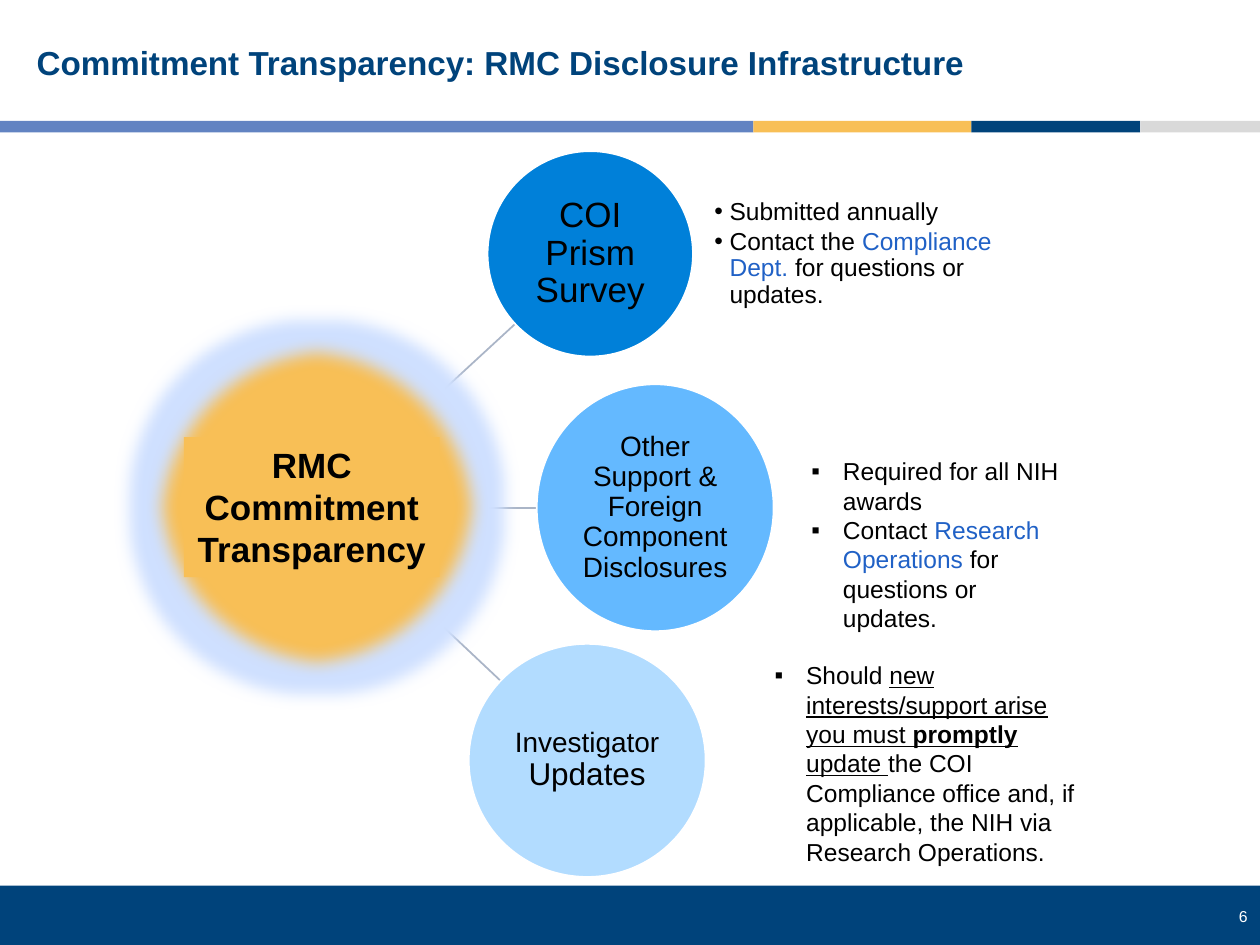
from dataclasses import dataclass

from lxml.etree import SubElement
from pptx import Presentation
from pptx.dml.color import RGBColor
from pptx.enum.shapes import MSO_CONNECTOR, MSO_SHAPE
from pptx.enum.text import MSO_ANCHOR, MSO_AUTO_SIZE, PP_ALIGN
from pptx.oxml.ns import qn
from pptx.util import Inches, Pt

NAVY = RGBColor(0x00, 0x43, 0x7B)
PERIWINKLE = RGBColor(0x62, 0x83, 0xC2)
GOLD = RGBColor(0xF8, 0xBF, 0x56)
GRAY = RGBColor(0xD9, 0xD9, 0xD9)
SPOKE = RGBColor(0xAA, 0xB5, 0xC7)
LINK = RGBColor(0x20, 0x61, 0xC6)
BLACK = RGBColor(0, 0, 0)
WHITE = RGBColor(0xFF, 0xFF, 0xFF)
BLUES = [RGBColor(0x00, 0x80, 0xD9), RGBColor(0x64, 0xB9, 0xFF), RGBColor(0xB2, 0xDC, 0xFF)]
GLOW = "CFE0FF"


@dataclass
class Run:
    text: str
    size: float = 14
    color: RGBColor = BLACK
    bold: bool = False
    underline: bool = False


@dataclass
class Topic:
    box: tuple
    fill: RGBColor
    label: list
    spoke: tuple


@dataclass
class BulletList:
    box: tuple
    items: list
    char: str = "▪"
    indent: float = 0.25
    spacing: float = 1.0
    after: float = 0
    margins: tuple = (0.1, 0.05)
    anchor: MSO_ANCHOR = MSO_ANCHOR.TOP


TOPICS = [
    Topic((3.87, 1.2, 1.63, 1.63), BLUES[0], [Run("COI Prism Survey", 20)],
          (3.46, 3.15, 4.09, 2.57)),
    Topic((4.26, 3.05, 1.88, 1.96), BLUES[1],
          [Run("Other Support & Foreign Component Disclosures", 16)], (3.46, 4.03, 4.26, 4.03)),
    Topic((3.72, 5.11, 1.88, 1.85), BLUES[2], [Run("Investigator ", 16), Run("Updates", 18)],
          (3.46, 4.92, 3.97, 5.4)),
]
LISTS = [
    BulletList((5.67, 1.2, 2.45, 1.63), [
        [Run("Submitted annually")],
        [Run("Contact the "), Run("Compliance Dept.", color=LINK),
         Run(" for questions or updates.")],
    ], "•", 0.12, 0.9, 2, (0, 0), MSO_ANCHOR.MIDDLE),
    BulletList((6.34, 3.57, 2.3, 1.28), [
        [Run("Required for all NIH awards")],
        [Run("Contact "), Run("Research Operations ", color=LINK),
         Run("for questions or updates.")],
    ]),
    BulletList((6.05, 5.19, 2.6, 1.75), [
        [Run("Should "), Run("new interests/support arise you must ", underline=True),
         Run("promptly", bold=True, underline=True), Run(" update ", underline=True),
         Run("the COI Compliance office and, if applicable, the NIH via Research Operations.")],
    ]),
]


def place(sp, box: tuple) -> None:
    sp.left, sp.top, sp.width, sp.height = map(Inches, box)


def setup(sp, margins: tuple = (0.1, 0.05), anchor=MSO_ANCHOR.TOP):
    tf = sp.text_frame
    tf.word_wrap = True
    tf.auto_size = MSO_AUTO_SIZE.NONE
    tf.vertical_anchor = anchor
    tf.margin_left = tf.margin_right = Inches(margins[0])
    tf.margin_top = tf.margin_bottom = Inches(margins[1])
    return tf


def write(p, runs: list, align=PP_ALIGN.LEFT, spacing: float = 1.0, after: float = 0) -> None:
    p.alignment, p.line_spacing = align, spacing
    p.space_before, p.space_after = Pt(0), Pt(after)
    for run in runs:
        r = p.add_run()
        r.text = run.text
        r.font.name, r.font.size = "Arial", Pt(run.size)
        r.font.bold, r.font.underline = run.bold, run.underline
        r.font.color.rgb = run.color


def add_filled(slide, kind, box: tuple, fill: RGBColor, outlined: bool = False):
    sp = slide.shapes.add_shape(kind, *map(Inches, box))
    sp.shadow.inherit = False
    sp.fill.solid()
    sp.fill.fore_color.rgb = fill
    if outlined:
        sp.line.color.rgb = WHITE
        sp.line.width = Pt(1)
    else:
        sp.line.fill.background()
    return sp


def add_spoke(slide, ends: tuple) -> None:
    cx = slide.shapes.add_connector(MSO_CONNECTOR.STRAIGHT, *map(Inches, ends))
    cx.line.color.rgb = SPOKE
    cx.line.width = Pt(1)
    SubElement(cx._element.spPr, qn("a:effectLst"))


def add_halo(sp) -> None:
    effects = sp._element.spPr.find(qn("a:effectLst"))
    glow = SubElement(effects, qn("a:glow"), rad=str(Pt(18)))
    SubElement(glow, qn("a:srgbClr"), val=GLOW)
    SubElement(effects, qn("a:softEdge"), rad=str(Pt(10)))


def fill_list(sp, data: BulletList) -> None:
    place(sp, data.box)
    tf = setup(sp, data.margins, data.anchor)
    for i, runs in enumerate(data.items):
        p = tf.add_paragraph() if i else tf.paragraphs[0]
        pPr = p._p.get_or_add_pPr()
        pPr.set("marL", str(Inches(data.indent)))
        pPr.set("indent", str(-Inches(data.indent)))
        SubElement(pPr, qn("a:buFont"), typeface="Arial")
        SubElement(pPr, qn("a:buChar"), char=data.char)
        write(p, runs, spacing=data.spacing, after=data.after)


def main() -> None:
    """Build the disclosure infrastructure slide."""
    prs = Presentation()
    prs.slide_width, prs.slide_height = Inches(10), Inches(7.5)
    slide = prs.slides.add_slide(prs.slide_layouts[3])

    add_filled(slide, MSO_SHAPE.RECTANGLE, (0, 7.03, 10, 0.47), NAVY)
    edges = [0, 5.98, 7.71, 9.05, 10]
    for left, right, color in zip(edges, edges[1:], [PERIWINKLE, GOLD, NAVY, GRAY]):
        add_filled(slide, MSO_SHAPE.RECTANGLE, (left, 0.96, right - left, 0.09), color)
    number = slide.shapes.add_textbox(*map(Inches, (9.31, 7.15, 0.69, 0.25)))
    write(setup(number).paragraphs[0], [Run("6", 9, WHITE)], PP_ALIGN.RIGHT)

    title = slide.shapes.title
    place(title, (0.19, 0.17, 9.57, 0.69))
    write(setup(title, anchor=MSO_ANCHOR.MIDDLE).paragraphs[0],
          [Run("Commitment Transparency: RMC Disclosure Infrastructure", 19, NAVY, True)],
          spacing=0.9)

    for topic in TOPICS:
        add_spoke(slide, topic.spoke)
    add_halo(add_filled(slide, MSO_SHAPE.OVAL, (1.15, 2.66, 2.72, 2.72), GOLD, True))
    for topic in TOPICS:
        sp = add_filled(slide, MSO_SHAPE.OVAL, topic.box, topic.fill, True)
        tf = setup(sp, (0.01, 0.01), MSO_ANCHOR.MIDDLE)
        write(tf.paragraphs[0], topic.label, PP_ALIGN.CENTER, 0.9)
    hub = add_filled(slide, MSO_SHAPE.RECTANGLE, (1.46, 3.47, 2.03, 1.11), GOLD)
    write(setup(hub).paragraphs[0], [Run("RMC Commitment Transparency", 20, bold=True)],
          PP_ALIGN.CENTER)

    bodies = [slide.placeholders[1], slide.placeholders[2],
              slide.shapes.add_textbox(*map(Inches, LISTS[2].box))]
    for sp, data in zip(bodies, LISTS):
        fill_list(sp, data)

    prs.save("out.pptx")


if __name__ == "__main__":
    main()
